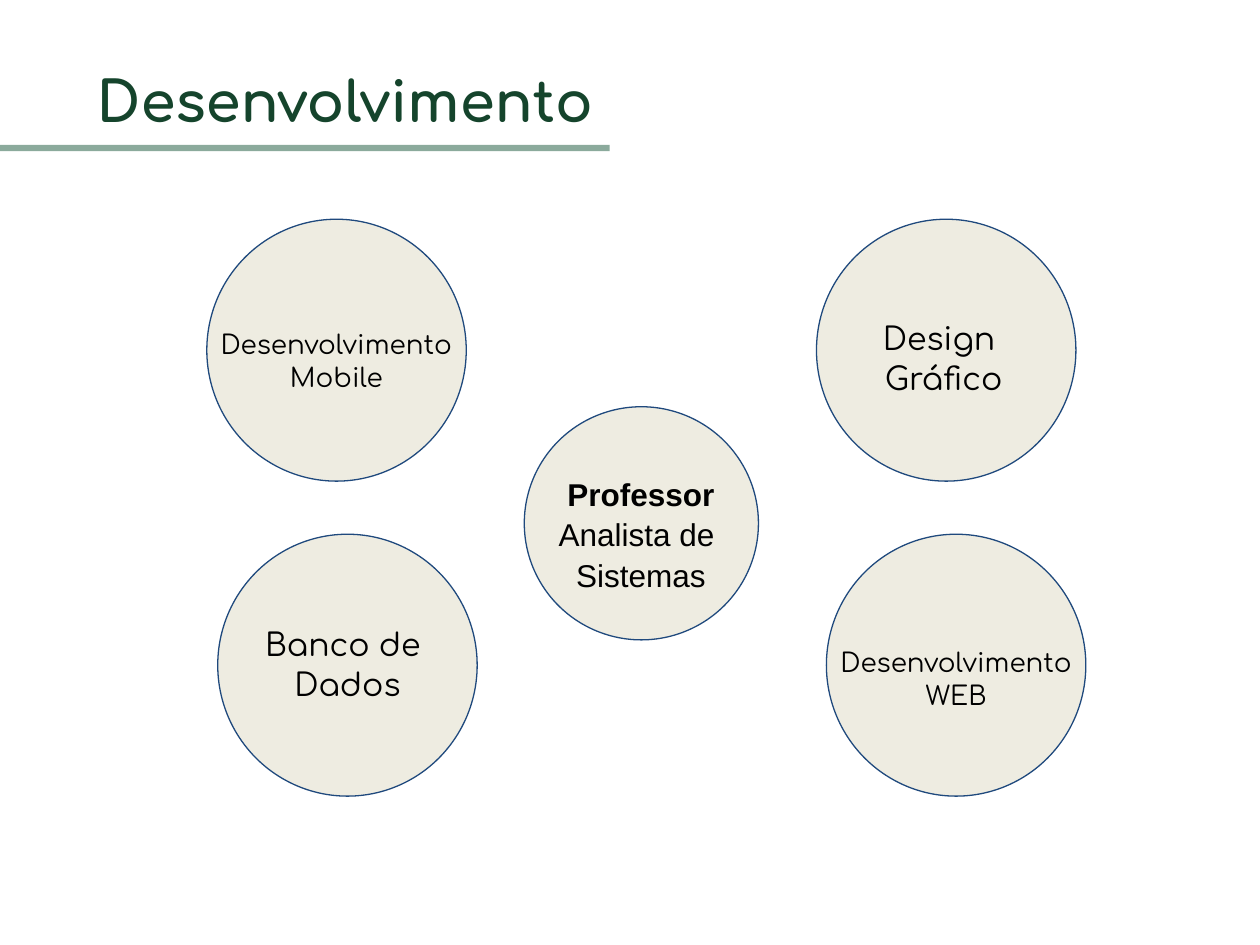
from lxml import etree
from pptx import Presentation, util as u
from pptx.dml.color import RGBColor
from pptx.enum import shapes, text
from pptx.oxml.ns import qn

HEADING = "Desenvolvimento"
HEADING_FORMAT = {"name": "Comfortaa", "size": u.Pt(32), "bold": True}
TOP, BOTTOM = 4.42, 10.77
AREA_SIZE = (5.23, 5.28)
AREAS = [
    (4.17, TOP, ["Desenvolvimento", "Mobile"], 15, (3.68, 6.32, 6.2)),
    (16.46, TOP, ["Design ", "Gráfico"], 18, (16.84, 6.12, 4.37)),
    (4.39, BOTTOM, ["Banco de ", "Dados"], 18, (4.39, 12.29, 5.23)),
    (16.66, BOTTOM, ["Desenvolvimento ", "WEB"], 15, (16.66, 12.73, 5.23)),
]
ROLE_CIRCLE = (10.57, 8.2, 4.72, 4.7)
ROLE = ["Professor", "Analista de ", "Sistemas"]
ROLE_LABEL = (9.2, 9.27, 7.44)
LABEL_HEIGHT = 2.39


def rgb(code):
    return RGBColor.from_string(code)


def apply(target, values):
    for key, value in values.items():
        setattr(target, key, value)


def add_filled(slide, kind, box, fill, outline=None):
    shape = slide.shapes.add_shape(kind, *map(u.Cm, box))
    shape.shadow.inherit = False
    shape.fill.solid()
    shape.fill.fore_color.rgb = rgb(fill)
    if outline:
        shape.line.color.rgb = rgb(outline)
        shape.line.width = u.Pt(0.75)
    else:
        shape.line.fill.background()
    return shape


def add_text(slide, box, lines, color, formats, frame_values, paragraph_values):
    frame = slide.shapes.add_textbox(*map(u.Cm, box)).text_frame
    apply(frame, {"word_wrap": True, **frame_values})
    for index, (line, values) in enumerate(zip(lines, formats)):
        paragraph = frame.add_paragraph() if index else frame.paragraphs[0]
        apply(paragraph, paragraph_values)
        run = paragraph.add_run()
        run.text = line
        apply(run.font, values)
        run.font.color.rgb = rgb(color)


def add_circle(slide, box):
    add_filled(slide, shapes.MSO_SHAPE.OVAL, box, "EEECE1", "1F497D")


def add_label(slide, place, lines, formats):
    inset = u.Cm(0.25)
    add_text(slide, (*place, LABEL_HEIGHT), lines, "000000", formats,
             {"margin_top": inset, "margin_bottom": inset},
             {"alignment": text.PP_ALIGN.CENTER, "line_spacing": 1.07})


def main():
    deck = Presentation()
    apply(deck, {"slide_width": u.Cm(25.4), "slide_height": u.Cm(19.05)})
    slide = deck.slides.add_slide(deck.slide_layouts[6])

    underline = add_filled(slide, shapes.MSO_SHAPE.RECTANGLE,
                           (0, 2.92, 12.29, 0.13), "18563A")
    fill_color = underline.fill._xPr.find(qn("a:solidFill"))[0]
    etree.SubElement(fill_color, qn("a:alpha"), val="50000")
    add_text(slide, (1.7, 1.12, 16.81, 1.8), [HEADING], "15442C",
             [HEADING_FORMAT],
             {"vertical_anchor": text.MSO_ANCHOR.MIDDLE}, {})

    for left, top, lines, size, place in AREAS:
        add_circle(slide, (left, top, *AREA_SIZE))
        font = {"name": "Comfortaa", "size": u.Pt(size)}
        add_label(slide, place, lines, [font] * len(lines))

    add_circle(slide, ROLE_CIRCLE)
    role_formats = [{"name": "Arial", "size": u.Pt(18), "bold": line == ROLE[0]}
                    for line in ROLE]
    add_label(slide, ROLE_LABEL, ROLE, role_formats)
    deck.save("out.pptx")


if __name__ == "__main__":
    main()
